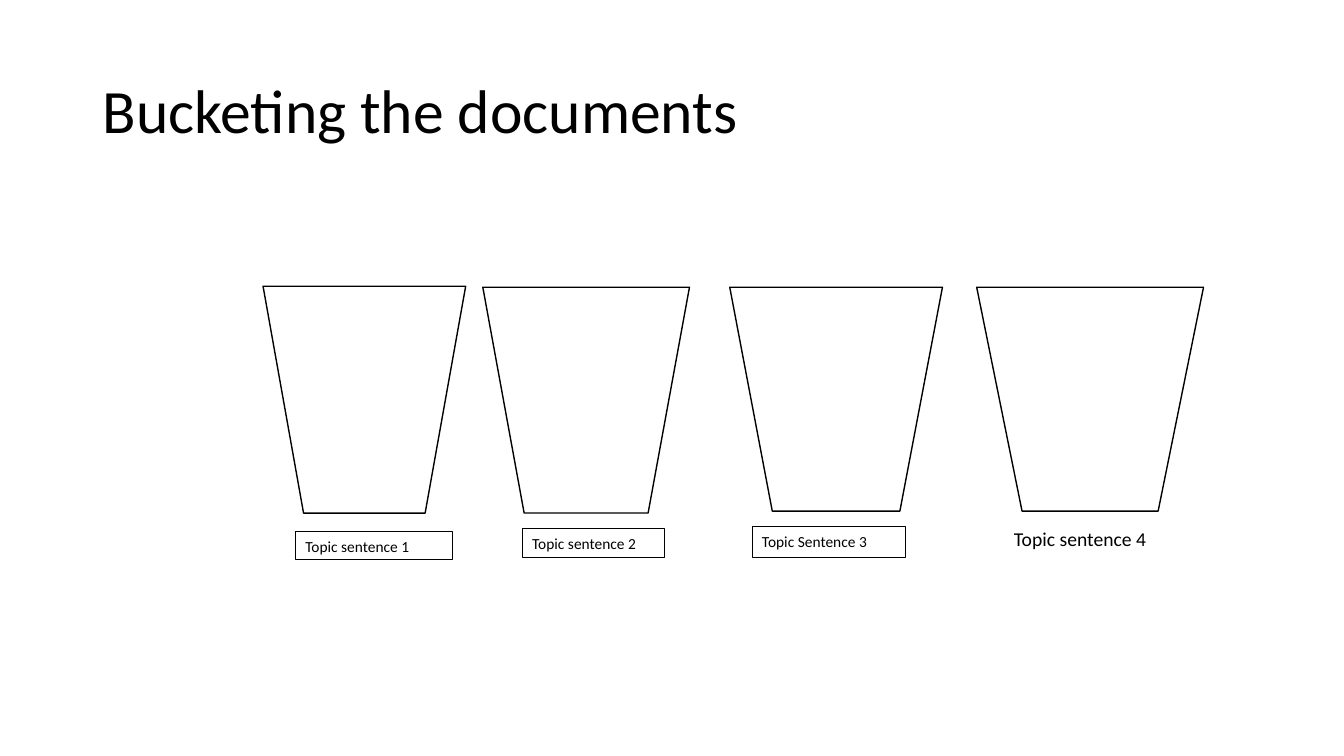
from pptx import Presentation
from pptx.dml.color import RGBColor
from pptx.enum.shapes import MSO_SHAPE
from pptx.enum.text import MSO_ANCHOR, PP_ALIGN
from pptx.util import Inches, Pt

BLACK = RGBColor(0, 0, 0)
WHITE = RGBColor(255, 255, 255)
COLS, ROWS = 40, 30

BUCKETS = [
    (7.83, 11.36, 6.03, 9),
    (14.37, 11.4, 6.15, 8.96),
    (21.72, 11.4, 6.33, 8.88),
    (29.07, 11.4, 6.75, 8.88),
]
LABELS = [
    ("Topic sentence 1", (8.79, 21.08, 4.68, 1.12)),
    ("Topic sentence 2", (15.54, 20.96, 4.23, 1.16)),
    ("Topic Sentence 3", (22.38, 20.88, 4.56, 1.24)),
]


class Board:
    """Draws styled elements on one slide, placed by grid columns and rows."""

    def __init__(self, deck, font):
        self.font = font
        self.col = deck.slide_width / COLS
        self.row = deck.slide_height / ROWS
        self.shapes = deck.slides.add_slide(deck.slide_layouts[6]).shapes

    def place(self, cell):
        left, top, width, height = cell
        return (round(left * self.col), round(top * self.row),
                round(width * self.col), round(height * self.row))

    def letter(self, shape, text, size, line=1.0, after=0, anchor=MSO_ANCHOR.TOP):
        frame = shape.text_frame
        frame.text = text
        frame.word_wrap = True
        frame.vertical_anchor = anchor
        para = frame.paragraphs[0]
        para.alignment = PP_ALIGN.LEFT
        para.line_spacing = line
        para.space_after = Pt(after)
        font = para.runs[0].font
        font.name, font.size, font.color.rgb = self.font, Pt(size), BLACK

    def text(self, cell, text, size, **style):
        self.letter(self.shapes.add_textbox(*self.place(cell)), text, size, **style)

    def outline(self, kind, cell, weight):
        shape = self.shapes.add_shape(kind, *self.place(cell))
        shape.shadow.inherit = False
        shape.fill.background()
        shape.line.color.rgb = BLACK
        shape.line.width = Pt(weight)
        return shape

    def bucket(self, cell):
        self.outline(MSO_SHAPE.FLOWCHART_MANUAL_OPERATION, cell, 1)

    def label(self, cell, text):
        shape = self.outline(MSO_SHAPE.RECTANGLE, cell, 0.5)
        shape.fill.solid()
        shape.fill.fore_color.rgb = WHITE
        self.letter(shape, text, 11, line=1.07, after=8)


def main():
    deck = Presentation()
    deck.slide_width, deck.slide_height = Inches(13.33), Inches(7.5)
    board = Board(deck, "Calibri")
    board.text((2.76, 1.6, 34.5, 5.8), "Bucketing the documents", 44,
               line=0.9, anchor=MSO_ANCHOR.MIDDLE)
    for cell in BUCKETS:
        board.bucket(cell)
    for text, cell in LABELS:
        board.label(cell, text)
    board.text((29.88, 20.72, 5.1, 1.36), "Topic sentence 4", 14)
    deck.save("out.pptx")


if __name__ == "__main__":
    main()
